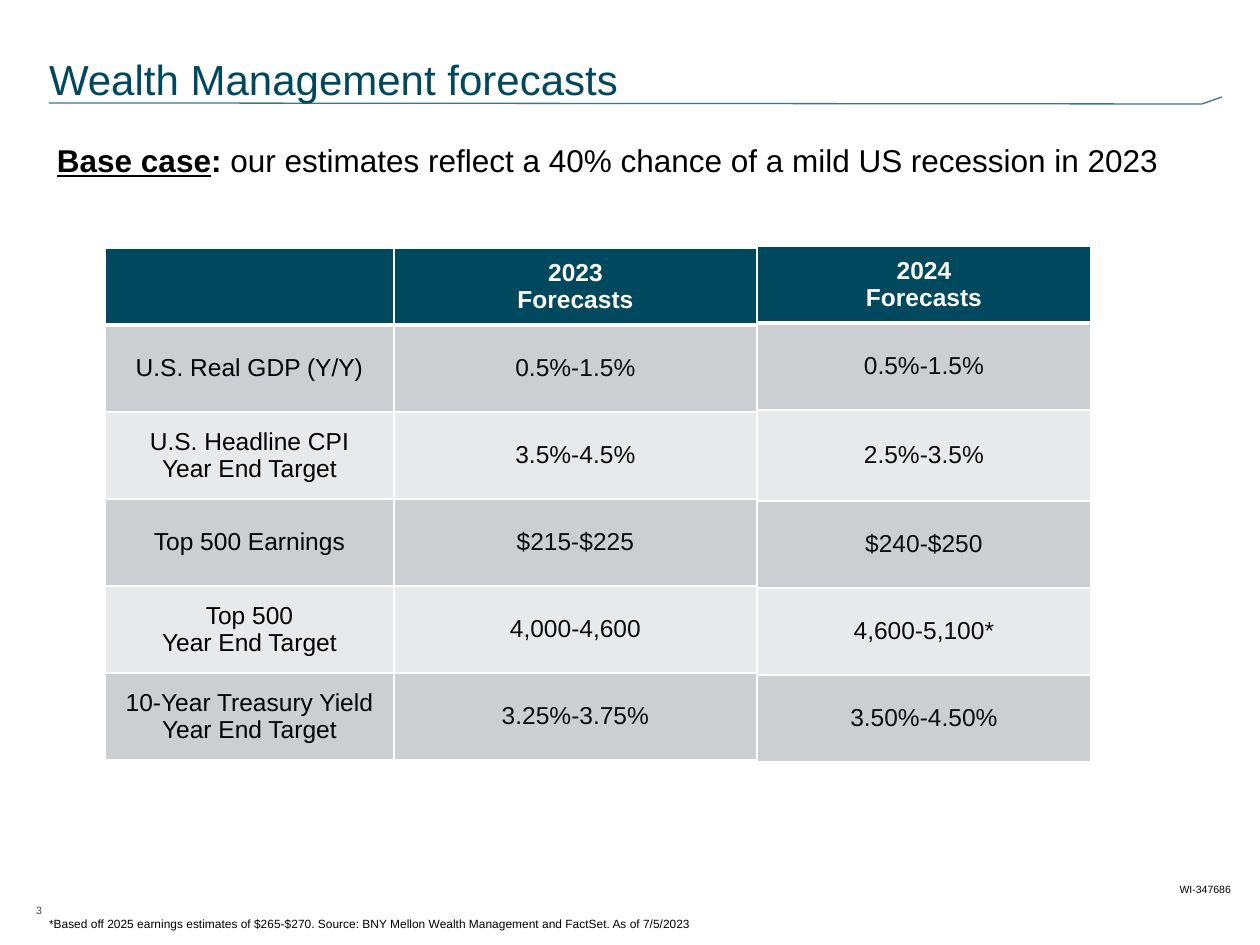
from dataclasses import dataclass

from lxml import etree
from pptx import Presentation
from pptx import util as u
from pptx.dml.color import RGBColor
from pptx.enum import text
from pptx.oxml.ns import qn

SCALE = 914400 / 126
FONT = "Arial"
COLORS = {"teal": "00485E", "white": "FFFFFF", "black": "000000", "value": "0D0D0D",
          "grey": "434344", "band_dark": "CCCFD2", "band_light": "E7E9EA"}
LEFT, CENTER, RIGHT = (text.PP_ALIGN.LEFT, text.PP_ALIGN.CENTER, text.PP_ALIGN.RIGHT)


@dataclass
class Run:
    text: str
    size: float
    color: str = "black"
    bold: bool = False
    underline: bool = False


@dataclass
class Box:
    left: int
    top: int
    width: int
    height: int

    def emu(self) -> tuple:
        return tuple(px(n) for n in (self.left, self.top, self.width, self.height))


@dataclass
class ForecastTable:
    left: int
    top: int
    widths: list[int]
    heights: list[int]
    rows: list[list[str]]


def px(n: int) -> u.Emu:
    return u.Emu(round(n * SCALE))


def rgb(name: str) -> RGBColor:
    return RGBColor.from_string(COLORS[name])


def write(tf, paragraphs: list[list[Run]], align) -> None:
    for i, runs in enumerate(paragraphs):
        p = tf.paragraphs[0] if i == 0 else tf.add_paragraph()
        p.alignment = align
        for run in runs:
            r = p.add_run()
            r.text = run.text
            r.font.name, r.font.size = FONT, u.Pt(run.size)
            r.font.bold, r.font.underline = run.bold, run.underline
            r.font.color.rgb = rgb(run.color)


def format_frame(tf, anchor) -> None:
    """Remove the insets and fix the frame's size."""
    tf.margin_left = tf.margin_right = tf.margin_top = tf.margin_bottom = 0
    tf.word_wrap = True
    tf.auto_size = text.MSO_AUTO_SIZE.NONE
    tf.vertical_anchor = anchor


def add_label(s, box: Box, runs: list[Run], align=LEFT, anchor=text.MSO_ANCHOR.BOTTOM) -> None:
    tf = s.shapes.add_textbox(*box.emu()).text_frame
    format_frame(tf, anchor)
    write(tf, [runs], align)


def add_title(s, box: Box, run: Run) -> None:
    sp = s.shapes.title
    sp.left, sp.top, sp.width, sp.height = box.emu()
    format_frame(sp.text_frame, text.MSO_ANCHOR.BOTTOM)
    write(sp.text_frame, [[run]], LEFT)


def add_title_rule(s, points: list[tuple[int, int]]) -> None:
    start, *rest = points
    builder = s.shapes.build_freeform(*start, scale=SCALE)
    builder.add_line_segments(rest, close=False)
    sp = builder.convert_to_shape()
    sp.shadow.inherit = False
    sp.fill.background()
    sp.line.color.rgb = rgb("teal")
    sp.line.width = u.Pt(0.75)
    color = sp.line.fill._xPr.find(".//" + qn("a:srgbClr"))
    etree.SubElement(color, qn("a:alpha"), val="75000")


def set_borders(cell, top: int, bottom: int) -> None:
    tc_pr = cell._tc.get_or_add_tcPr()
    for i, (side, points) in enumerate([("L", 1), ("R", 1), ("T", top), ("B", bottom)]):
        ln = etree.Element(qn(f"a:ln{side}"), w=str(u.Pt(points)))
        fill = etree.SubElement(ln, qn("a:solidFill"))
        etree.SubElement(fill, qn("a:srgbClr"), val=COLORS["white"])
        tc_pr.insert(i, ln)


def add_forecasts(s, spec_: ForecastTable, label_column: bool) -> None:
    box = Box(spec_.left, spec_.top, sum(spec_.widths), sum(spec_.heights))
    table = s.shapes.add_table(len(spec_.heights), len(spec_.widths), *box.emu()).table
    for column, width in zip(table.columns, spec_.widths):
        column.width = px(width)
    for i, (row, height, values) in enumerate(zip(table.rows, spec_.heights, spec_.rows)):
        row.height = px(height)
        band = "teal" if i == 0 else "band_dark" if i % 2 else "band_light"
        for j, (cell, value) in enumerate(zip(row.cells, values)):
            color = "white" if i == 0 else "black" if label_column and j == 0 else "value"
            cell.fill.solid()
            cell.fill.fore_color.rgb = rgb(band)
            cell.margin_left = cell.margin_right = px(9)
            cell.margin_top = cell.margin_bottom = px(5)
            cell.vertical_anchor = text.MSO_ANCHOR.MIDDLE
            set_borders(cell, top=3 if i == 1 else 1, bottom=3 if i == 0 else 1)
            lines = [[Run(line, 14, color, bold=i == 0)] for line in value.split("\n")]
            write(cell.text_frame, lines, CENTER)


def main() -> None:
    prs = Presentation()
    prs.slide_width, prs.slide_height = px(1260), px(945)
    s = prs.slides.add_slide(prs.slide_layouts[5])

    add_title_rule(s, [(49, 103), (1202, 104), (1222, 97)])
    add_title(s, Box(49, 16, 1148, 88), Run("Wealth Management forecasts", 24, "teal"))
    add_label(s, Box(57, 139, 1150, 41), [
        Run("Base case", 18, bold=True, underline=True),
        Run(": ", 18, bold=True),
        Run("our estimates reflect a 40% chance of a mild US recession in 2023", 18),
    ], anchor=text.MSO_ANCHOR.MIDDLE)

    add_forecasts(s, ForecastTable(105, 248, [289, 363], [77] + [87] * 5, [
        ["", "2023\nForecasts"],
        ["U.S. Real GDP (Y/Y)", "0.5%-1.5%"],
        ["U.S. Headline CPI\nYear End Target", "3.5%-4.5%"],
        ["Top 500 Earnings", "$215-$225"],
        ["Top 500\nYear End Target", "4,000-4,600"],
        ["10-Year Treasury Yield\nYear End Target", "3.25%-3.75%"],
    ]), label_column=True)
    add_forecasts(s, ForecastTable(757, 246, [334], [77, 87, 91, 87, 87, 87], [
        ["2024\nForecasts"], ["0.5%-1.5%"], ["2.5%-3.5%"],
        ["$240-$250"], ["4,600-5,100*"], ["3.50%-4.50%"],
    ]), label_column=False)

    add_label(s, Box(853, 871, 378, 25), [Run("WI-347686", 6)], RIGHT)
    add_label(s, Box(-14, 893, 56, 24), [Run("3", 6, "grey")], RIGHT)
    add_label(s, Box(49, 908, 851, 23), [
        Run("*Based off 2025 earnings estimates of $265-$270. Source: BNY Mellon Wealth "
            "Management and FactSet. As of 7/5/2023", 6.8)])
    prs.save("out.pptx")


if __name__ == "__main__":
    main()
